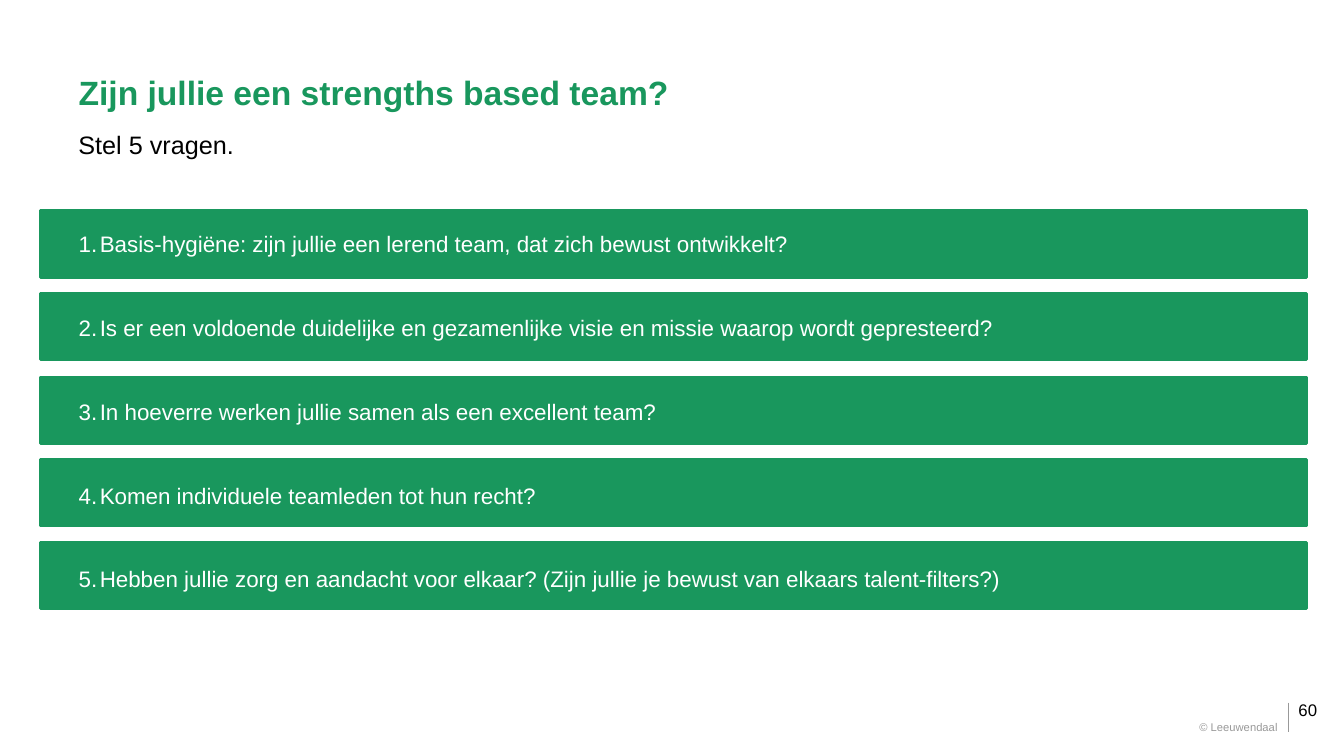
from dataclasses import dataclass

from lxml import etree
from pptx import Presentation
from pptx.dml.color import RGBColor
from pptx.enum.shapes import MSO_CONNECTOR, MSO_SHAPE
from pptx.enum.text import MSO_ANCHOR, MSO_AUTO_SIZE, PP_ALIGN
from pptx.oxml.ns import qn
from pptx.util import Emu, Pt

RECT = MSO_SHAPE.RECTANGLE
LINE = MSO_CONNECTOR.STRAIGHT
LEFT, RIGHT = PP_ALIGN.LEFT, PP_ALIGN.RIGHT
TOP, MIDDLE = MSO_ANCHOR.TOP, MSO_ANCHOR.MIDDLE
FIXED = MSO_AUTO_SIZE.NONE
SCALE = 9144
GREEN, WHITE, BLACK, GREY = "19975D", "FFFFFF", "000000", "999999"
BAR_TOP, BAR_STEP = 209, 82.25
LIST_GAP = 40.75
INDENT = 21

QUESTIONS = [
    "Basis-hygiëne: zijn jullie een lerend team, dat zich bewust ontwikkelt?",
    "Is er een voldoende duidelijke en gezamenlijke visie en missie waarop wordt gepresteerd?",
    "In hoeverre werken jullie samen als een excellent team?",
    "Komen individuele teamleden tot hun recht?",
    "Hebben jullie zorg en aandacht voor elkaar? (Zijn jullie je bewust van elkaars talent-filters?)",
]


@dataclass
class Label:
    text: str
    box: tuple[int, int, int, int]
    size: int
    color: str
    pad: int = 0
    align: PP_ALIGN = LEFT


LABELS = [
    Label("Stel 5 vragen.", (68, 123, 176, 40), 18, BLACK, pad=5),
    Label("60", (1278, 694, 55, 20), 12, BLACK),
    Label("© Leeuwendaal", (1115, 715, 162, 13), 8, GREY, align=RIGHT),
]


def px(size: int) -> Emu:
    return Emu(size * SCALE)


def rgb(color: str) -> RGBColor:
    return RGBColor.from_string(color)


def place(shape, box: tuple[int, int, int, int]) -> None:
    shape.left, shape.top, shape.width, shape.height = map(px, box)


def style(para, size: int, color: str, bold: bool = False) -> None:
    font = para.font
    font.name, font.size, font.bold = "Arial", Pt(size), bold
    font.color.rgb = rgb(color)


def number(para) -> None:
    props = para._p.get_or_add_pPr()
    props.set("marL", str(px(INDENT)))
    props.set("indent", str(px(-INDENT)))
    tint = etree.SubElement(props, qn("a:buClr"))
    etree.SubElement(tint, qn("a:srgbClr"), val=WHITE)
    etree.SubElement(props, qn("a:buFont"), typeface="Arial")
    etree.SubElement(props, qn("a:buAutoNum"), type="arabicPeriod")


def add_title(slide) -> None:
    title = slide.shapes.title
    place(title, (68, 66, 1222, 50))
    frame = title.text_frame
    frame.text = "Zijn jullie een strengths based team?"
    frame.auto_size, frame.vertical_anchor = FIXED, MIDDLE
    para = frame.paragraphs[0]
    para.alignment = LEFT
    style(para, 24, GREEN, True)


def add_list(slide) -> None:
    body = slide.placeholders[1]
    place(body, (68, 223, 1200, 369))
    frame = body.text_frame
    frame.text = "\n".join(QUESTIONS)
    frame.auto_size, frame.vertical_anchor = FIXED, TOP
    for row, para in enumerate(frame.paragraphs):
        number(para)
        para.space_before = Pt(LIST_GAP if row else 0)
        style(para, 16, WHITE)


def add_bar(slide, row: int) -> None:
    top = round(BAR_TOP + row * BAR_STEP)
    bar = slide.shapes.add_shape(RECT, px(40), px(top), px(1256), px(66))
    bar.shadow.inherit = False
    bar.fill.solid()
    bar.fill.fore_color.rgb = rgb(GREEN)
    bar.line.color.rgb = rgb(GREEN)
    bar.line.width = Pt(2)
    slide.shapes.title._element.addprevious(bar._element)


def add_label(slide, label: Label) -> None:
    box = slide.shapes.add_textbox(*map(px, label.box))
    frame = box.text_frame
    frame.text = label.text
    frame.word_wrap = True
    frame.margin_top = frame.margin_bottom = px(label.pad)
    para = frame.paragraphs[0]
    para.alignment = label.align
    style(para, label.size, label.color)


def add_rule(slide) -> None:
    rule = slide.shapes.add_connector(LINE, px(1278), px(697), px(1278), px(726))
    rule.line.color.rgb = rgb(GREY)
    rule.line.width = Pt(0.75)
    etree.SubElement(rule._element.spPr, qn("a:effectLst"))


def main() -> None:
    deck = Presentation()
    deck.slide_width, deck.slide_height = px(1333), px(750)
    slide = deck.slides.add_slide(deck.slide_layouts[1])
    add_title(slide)
    add_list(slide)
    for row in range(len(QUESTIONS)):
        add_bar(slide, row)
    for label in LABELS:
        add_label(slide, label)
    add_rule(slide)
    deck.save("out.pptx")


if __name__ == "__main__":
    main()
